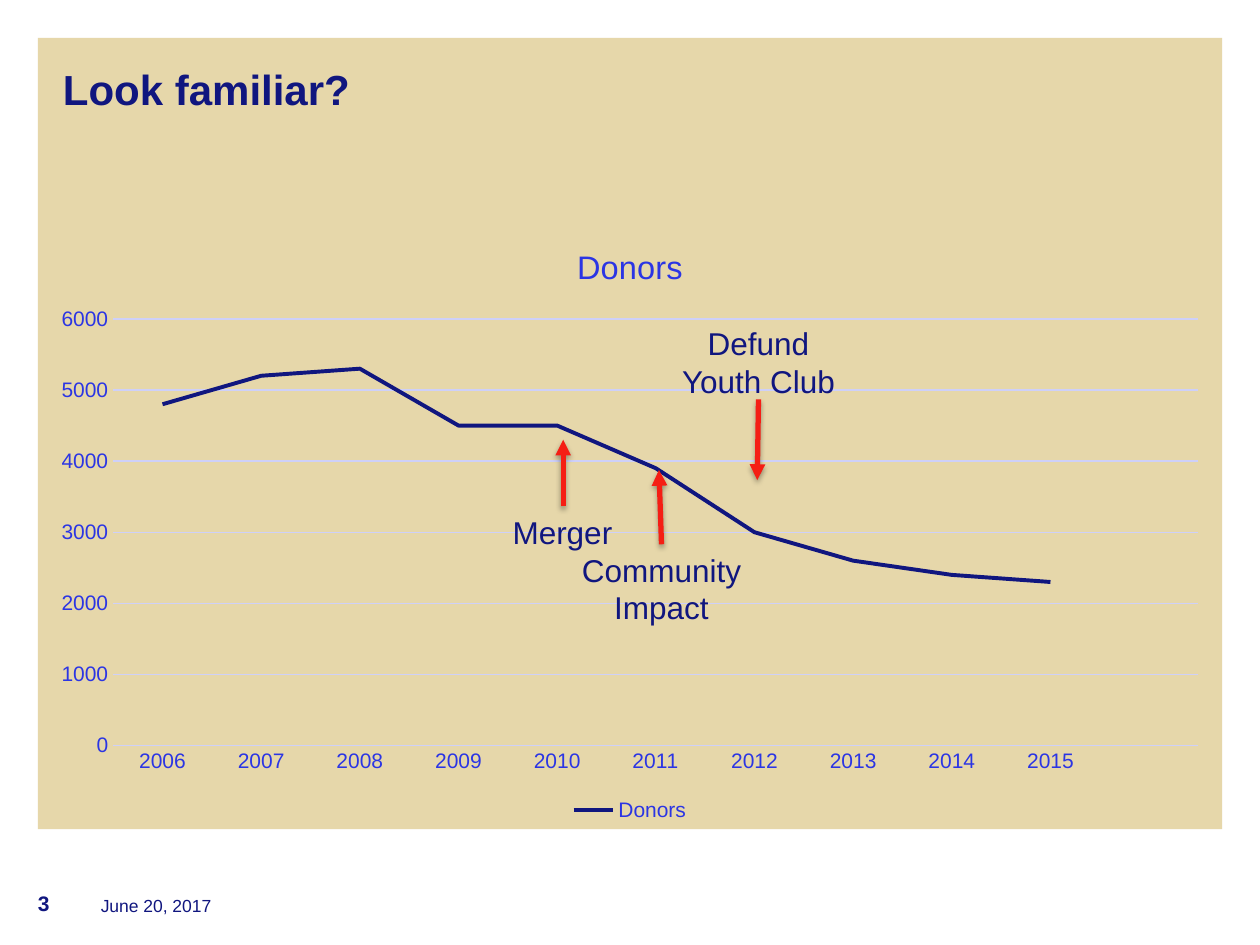
import pptx
import pptx.chart.data
import pptx.dml.color
import pptx.enum.chart
import pptx.enum.shapes
import pptx.enum.text
import pptx.oxml
import pptx.oxml.ns
import pptx.util
from pptx.util import Inches

NAVY = pptx.dml.color.RGBColor(0x10, 0x16, 0x7F)
BLUE = pptx.dml.color.RGBColor(0x2B, 0x35, 0xE4)
PALE_BLUE = pptx.dml.color.RGBColor(0xCE, 0xD0, 0xF9)
SAND = pptx.dml.color.RGBColor(0xE6, 0xD7, 0xAA)
RED = pptx.dml.color.RGBColor(0xF5, 0x1E, 0x14)
FONT = "Arial"
LEFT = pptx.enum.text.PP_ALIGN.LEFT
CENTER = pptx.enum.text.PP_ALIGN.CENTER
TOP = pptx.enum.text.MSO_ANCHOR.TOP
BOTTOM = pptx.enum.text.MSO_ANCHOR.BOTTOM

DONORS = {
    "2006": 4800, "2007": 5200, "2008": 5300, "2009": 4500, "2010": 4500,
    "2011": 3900, "2012": 3000, "2013": 2600, "2014": 2400, "2015": 2300,
    "": None,
}


def format_font(font, size, color, bold=False):
    font.name = FONT
    font.size = pptx.util.Pt(size)
    font.bold = bold
    font.color.rgb = color


def add_text(slide, text, position, size=18, bold=False, align=LEFT, anchor=TOP,
             insets=(0.1, 0.05, 0.1, 0.05), wrap=True):
    shape = slide.shapes.add_textbox(*map(Inches, position))
    frame = shape.text_frame
    frame.text = text
    frame.word_wrap = wrap
    if not wrap:
        frame.auto_size = pptx.enum.text.MSO_AUTO_SIZE.SHAPE_TO_FIT_TEXT
    frame.vertical_anchor = anchor
    (frame.margin_left, frame.margin_top,
     frame.margin_right, frame.margin_bottom) = map(Inches, insets)
    for paragraph in frame.paragraphs:
        paragraph.alignment = align
        format_font(paragraph.font, size, NAVY, bold)
    return shape


def add_panel(slide):
    shape = slide.shapes.add_shape(
        pptx.enum.shapes.MSO_SHAPE.RECTANGLE,
        Inches(0.3), Inches(0.3), Inches(9.4), Inches(6.28))
    shape.shadow.inherit = False
    shape.fill.solid()
    shape.fill.fore_color.rgb = SAND
    shape.line.fill.background()


def format_axis(axis):
    axis.major_tick_mark = pptx.enum.chart.XL_TICK_MARK.NONE
    axis.minor_tick_mark = pptx.enum.chart.XL_TICK_MARK.NONE
    format_font(axis.tick_labels.font, 12, BLUE)


def format_line(line, color, width):
    line.color.rgb = color
    line.width = pptx.util.Pt(width)


def add_donor_chart(slide):
    data = pptx.chart.data.CategoryChartData(number_format="0")
    data.categories = list(DONORS)
    data.add_series("Donors", list(DONORS.values()))
    chart = slide.shapes.add_chart(
        pptx.enum.chart.XL_CHART_TYPE.LINE,
        Inches(0.3), Inches(1.75), Inches(9.4), Inches(4.81), data).chart
    format_font(chart.font, 10, NAVY)

    chart.has_title = True
    chart.chart_title.include_in_layout = False
    chart.chart_title.text_frame.text = "Donors"
    title = chart.chart_title.text_frame.paragraphs[0]
    format_font(title.runs[0].font, 18.6, BLUE)

    chart.has_legend = True
    chart.legend.position = pptx.enum.chart.XL_LEGEND_POSITION.BOTTOM
    chart.legend.include_in_layout = False
    format_font(chart.legend.font, 12, BLUE)

    format_axis(chart.category_axis)
    format_line(chart.category_axis.format.line, PALE_BLUE, 0.75)
    value_axis = chart.value_axis
    format_axis(value_axis)
    value_axis.minimum_scale = 0
    value_axis.maximum_scale = 6000
    value_axis.major_unit = 1000
    value_axis.tick_labels.number_format = "0"
    value_axis.tick_labels.number_format_is_linked = False
    value_axis.format.line.fill.background()
    format_line(value_axis.major_gridlines.format.line, PALE_BLUE, 0.75)

    plot = chart.plots[0]
    plot.vary_by_categories = False
    series = plot.series[0]
    series.smooth = False
    series.marker.style = pptx.enum.chart.XL_MARKER_STYLE.NONE
    format_line(series.format.line, NAVY, 2.25)


def add_arrow(slide, start, end):
    connector = slide.shapes.add_connector(
        pptx.enum.shapes.MSO_CONNECTOR.STRAIGHT, *map(Inches, start + end))
    format_line(connector.line, RED, 3)
    namespace = pptx.oxml.ns.nsdecls("a")
    connector.line._get_or_add_ln().append(
        pptx.oxml.parse_xml(f'<a:tailEnd {namespace} type="triangle"/>'))
    connector._element.spPr.append(pptx.oxml.parse_xml(
        f'<a:effectLst {namespace}>'
        '<a:outerShdw blurRad="39370" dist="22860" dir="5400000" rotWithShape="0">'
        '<a:srgbClr val="000000"><a:alpha val="35000"/></a:srgbClr>'
        '</a:outerShdw></a:effectLst>'))
    return connector


def add_event(slide, text, position, start, end, align=CENTER, site=None):
    connector = add_arrow(slide, start, end)
    label = add_text(slide, text, position, align=align, wrap=False)
    if site is not None:
        connector.begin_connect(label, site)


def main():
    presentation = pptx.Presentation()
    presentation.slide_width = Inches(10)
    presentation.slide_height = Inches(7.5)
    slide = presentation.slides.add_slide(presentation.slide_layouts[6])

    add_panel(slide)
    add_text(slide, "Look familiar?", (0.3, 0.3, 9.4, 1.25), size=24, bold=True,
             insets=(0.2, 0.2, 0.5, 0))
    add_donor_chart(slide)

    footer = {"anchor": BOTTOM, "insets": (0, 0, 0, 0.08)}
    add_text(slide, "June 20, 2017", (0.8, 6.85, 7, 0.5), size=10, **footer)
    add_text(slide, "3", (0.3, 6.85, 0.5, 0.5), size=12, bold=True, **footer)

    add_event(slide, "Merger", (3.97, 4.02, 1, 0.4),
              (4.47, 4.02), (4.47, 3.49), align=LEFT, site=0)
    add_event(slide, "Community\nImpact", (4.51, 4.32, 1.48, 0.71),
              (5.24, 4.32), (5.23, 3.73), site=0)
    add_event(slide, "Defund\nYouth Club", (5.28, 2.52, 1.48, 0.71),
              (6.02, 3.17), (6.01, 3.81))

    presentation.save("out.pptx")


if __name__ == "__main__":
    main()
